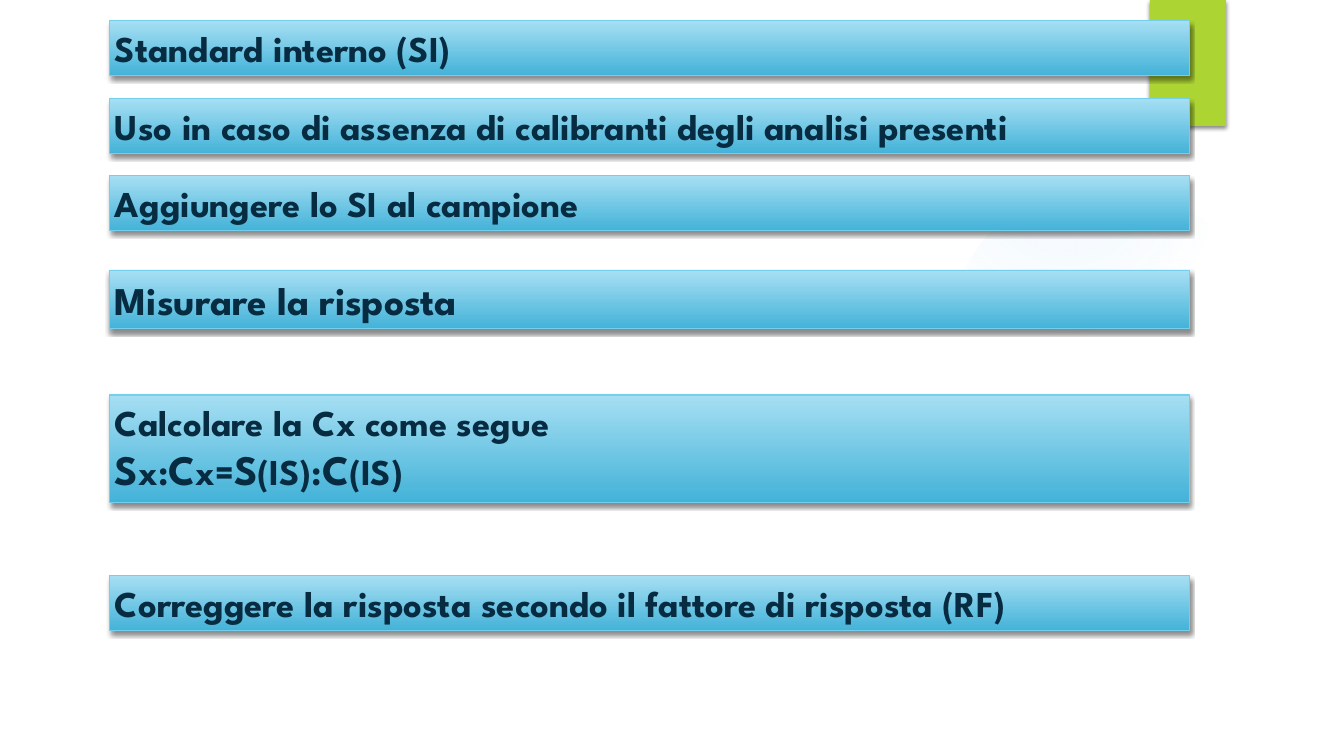
"""Build a slide of gradient bars listing the internal standard procedure."""
from dataclasses import dataclass

from lxml.etree import SubElement
from pptx import Presentation
from pptx.dml.color import RGBColor
from pptx.enum.shapes import MSO_SHAPE
from pptx.enum.text import MSO_ANCHOR, MSO_AUTO_SIZE, PP_ALIGN
from pptx.oxml.ns import qn
from pptx.util import Pt


@dataclass(frozen=True)
class Theme:
    font: str = "League Spartan"
    text: str = "072B40"
    line: str = "75CEEC"
    tab: str = "ACD433"
    shadow: str = "000000"
    bar_stops: tuple = ((0, "A6DFF3", 100), (100, "43B2D8", 100))
    glow_stops: tuple = ((0, "7AC4F0", 7), (36, "7AC4F0", 6), (69, "7AC4F0", 0))
    body: int = 26
    large: int = 28
    symbol: int = 30


THEME = Theme()
FORMULA = [
    ("S", THEME.symbol), ("x:", THEME.body), ("C", THEME.symbol), ("x=", THEME.body),
    ("S", THEME.symbol), ("(IS):", THEME.body), ("C", THEME.symbol), ("(IS)", THEME.body),
]
BARS = [
    (21, 55, [[("Standard interno (SI)", THEME.body)]]),
    (99, 55, [[("Uso in caso di assenza di calibranti degli analisi presenti", THEME.body)]]),
    (176, 55, [[("Aggiungere lo SI al campione", THEME.body)]]),
    (271, 58, [[("Misurare la risposta", THEME.large)]]),
    (395, 108, [[("Calcolare la Cx come segue", THEME.body)], FORMULA]),
    (576, 55, [[("Correggere la risposta secondo il fattore di risposta (RF)", THEME.body)]]),
]
SLIDE_SIZE = (1344, 756)
BAR_LEFT, BAR_WIDTH, INSET = 110, 1080, 5
GLOW_BOX = (949, 184, 310, 310)
TAB_BOX = (1150, 0, 76, 126)
GLOW_CENTRE = {"l": "38000", "t": "-20000", "r": "62000", "b": "120000"}


def px(length):
    return round(length * 914400 / 100.8)


def add_color(parent, color, opacity):
    element = SubElement(parent, qn("a:srgbClr"), val=color)
    if opacity < 100:
        SubElement(element, qn("a:alpha"), val=str(opacity * 1000))


def add_box(slide, preset, box):
    shape = slide.shapes.add_shape(preset, *map(px, box))
    shape.line.fill.background()
    shape.shadow.inherit = False
    return shape


def add_shadow(shape):
    effects = shape.element.spPr.find(qn("a:effectLst"))
    shadow = SubElement(effects, qn("a:outerShdw"), blurRad=str(Pt(3)), dist=str(Pt(2)),
                        dir="5400000", rotWithShape="0")
    add_color(shadow, THEME.shadow, 45)


def set_gradient(shape, stops, centre=None):
    shape.fill.gradient()
    gradient = shape.element.spPr.find(qn("a:gradFill"))
    gradient.clear()
    stop_list = SubElement(gradient, qn("a:gsLst"))
    for position, color, opacity in stops:
        stop = SubElement(stop_list, qn("a:gs"), pos=str(position * 1000))
        add_color(stop, color, opacity)
    if centre:
        circle = SubElement(gradient, qn("a:path"), path="circle")
        SubElement(circle, qn("a:fillToRect"), **centre)
    else:
        SubElement(gradient, qn("a:lin"), ang="5400000", scaled="0")


def write_lines(text_frame, lines):
    text_frame.word_wrap = True
    text_frame.auto_size = MSO_AUTO_SIZE.SHAPE_TO_FIT_TEXT
    text_frame.vertical_anchor = MSO_ANCHOR.TOP
    text_frame.margin_left = text_frame.margin_right = px(INSET)
    text_frame.margin_top = text_frame.margin_bottom = px(INSET)
    text_frame.text = "\n".join("" for line in lines)
    for paragraph, line in zip(text_frame.paragraphs, lines):
        paragraph.alignment = PP_ALIGN.LEFT
        for text, size in line:
            run = paragraph.add_run()
            run.text = text
            run.font.name = THEME.font
            run.font.size = Pt(size)
            run.font.bold = True
            run.font.color.rgb = RGBColor.from_string(THEME.text)


def add_bar(slide, top, height, lines):
    bar = add_box(slide, MSO_SHAPE.RECTANGLE, (BAR_LEFT, top, BAR_WIDTH, height))
    set_gradient(bar, THEME.bar_stops)
    bar.line.color.rgb = RGBColor.from_string(THEME.line)
    bar.line.width = Pt(0.75)
    add_shadow(bar)
    write_lines(bar.text_frame, lines)


def main():
    presentation = Presentation()
    presentation.slide_width, presentation.slide_height = map(px, SLIDE_SIZE)
    slide = presentation.slides.add_slide(presentation.slide_layouts[6])

    glow = add_box(slide, MSO_SHAPE.OVAL, GLOW_BOX)
    set_gradient(glow, THEME.glow_stops, GLOW_CENTRE)

    tab = add_box(slide, MSO_SHAPE.RECTANGLE, TAB_BOX)
    tab.fill.solid()
    tab.fill.fore_color.rgb = RGBColor.from_string(THEME.tab)
    add_shadow(tab)

    for top, height, lines in BARS:
        add_bar(slide, top, height, lines)
    presentation.save("out.pptx")


if __name__ == "__main__":
    main()
